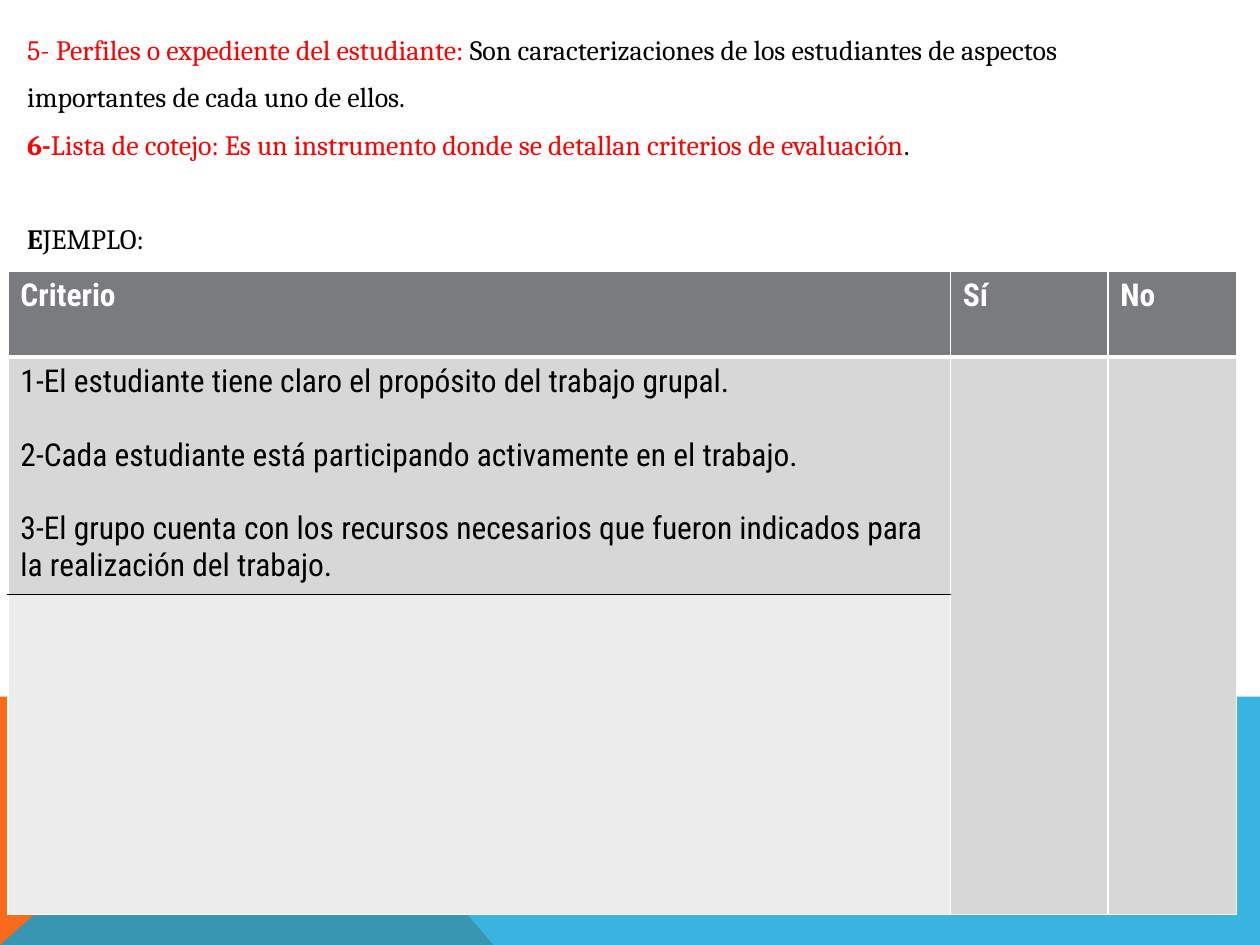
from typing import NamedTuple

from lxml.etree import SubElement
from pptx import Presentation
from pptx.dml.color import RGBColor
from pptx.oxml.ns import qn
from pptx.util import Pt

RED = RGBColor(0xFF, 0x00, 0x00)
BLACK = RGBColor(0x00, 0x00, 0x00)
WHITE = RGBColor(0xFF, 0xFF, 0xFF)
ORANGE = RGBColor(0xF9, 0x6A, 0x1B)
BLUE = RGBColor(0x08, 0xA1, 0xD9)
SLATE = RGBColor(0x79, 0x7B, 0x7E)
GREY = RGBColor(0xD7, 0xD7, 0xD8)
PALE = RGBColor(0xEC, 0xEC, 0xEC)


class Band(NamedTuple):
    points: list[tuple[float, float]]
    color: RGBColor
    alpha: int = 100


class Span(NamedTuple):
    text: str
    color: RGBColor = BLACK
    bold: bool = False


class Line(NamedTuple):
    spans: list[Span]
    before: float = 8


class Edge(NamedTuple):
    color: RGBColor = WHITE
    width: float = 1


class Row(NamedTuple):
    height: float
    fills: list[RGBColor]
    texts: list[list[str]]
    color: RGBColor = BLACK
    bold: bool = False


BANDS = [
    Band([(0, 540), (0, 397.5), (160.5, 397.5), (281.5, 540)], ORANGE),
    Band([(0, 540), (160.5, 397.5), (720, 398), (720, 540)], BLUE, 80),
]
LINES = [
    Line([
        Span("5- Perfiles o expediente del estudiante: ", RED),
        Span("Son caracterizaciones de los estudiantes de aspectos"),
    ]),
    Line([Span("importantes de cada uno de ellos.")]),
    Line([
        Span("6-", RED, True),
        Span("Lista de cotejo: Es un instrumento donde se detallan "
             "criterios de evaluación", RED),
        Span("."),
    ]),
    Line([Span("E", bold=True), Span("JEMPLO:")], 35),
]
COLS = [538.5, 90, 73.5]
ROWS = [
    Row(49, [SLATE] * 3, [["Criterio"], ["Sí"], ["No"]], WHITE, True),
    Row(134, [GREY] * 3, [[
        "1-El estudiante tiene claro el propósito del trabajo grupal.",
        "2-Cada estudiante está participando activamente en el trabajo.",
        "3-El grupo cuenta con los recursos necesarios que fueron indicados "
        "para la realización del trabajo.",
    ], [], []]),
    Row(183, [PALE, GREY, GREY], [[], [], []]),
]
THICK = Edge(width=3)
DARK = Edge(BLACK)
EDGES = {(0, col, "B"): THICK for col in range(3)}
EDGES |= {(1, col, "T"): THICK for col in range(3)}
EDGES |= {(1, 0, "B"): DARK, (2, 0, "T"): DARK}


def draw_band(slide, band: Band) -> None:
    start, *rest = band.points
    pen = slide.shapes.build_freeform(*start, scale=Pt(1))
    pen.add_line_segments(rest, close=True)
    shape = pen.convert_to_shape()
    shape.shadow.inherit = False
    shape.line.fill.background()
    shape.fill.solid()
    shape.fill.fore_color.rgb = band.color
    if band.alpha < 100:
        props = shape.element.spPr
        tint = props.find(qn("a:solidFill"))[0]
        SubElement(tint, qn("a:alpha"), val=str(band.alpha * 1000))


def draw_text(slide, lines: list[Line]) -> None:
    box = slide.shapes.add_textbox(Pt(8.5), Pt(15), Pt(703), Pt(136))
    frame = box.text_frame
    frame.word_wrap = True
    for i, line in enumerate(lines):
        para = frame.add_paragraph() if i else frame.paragraphs[0]
        para.space_before = Pt(line.before if i else 0)
        para.line_spacing = Pt(19.1)
        para.font.size = Pt(16)
        para.font.name = "Cambria"
        for span in line.spans:
            run = para.add_run()
            run.text = span.text
            run.font.color.rgb = span.color
            run.font.bold = span.bold


def draw_edge(cell, side: str, edge: Edge) -> None:
    props = cell._tc.get_or_add_tcPr()
    line = SubElement(props, qn(f"a:ln{side}"), w=str(Pt(edge.width)))
    fill = SubElement(line, qn("a:solidFill"))
    SubElement(fill, qn("a:srgbClr"), val=str(edge.color))


def fill_cell(cell, row: Row, col: int) -> None:
    cell.fill.solid()
    cell.fill.fore_color.rgb = row.fills[col]
    frame = cell.text_frame
    for i, text in enumerate(row.texts[col]):
        para = frame.add_paragraph() if i else frame.paragraphs[0]
        para.text = text
        para.space_before = Pt(21 if i else 0)
        para.font.size = Pt(18)
        para.font.name = "Roboto Condensed"
        para.font.bold = row.bold
        para.font.color.rgb = row.color


def draw_table(slide, rows: list[Row]) -> None:
    high = sum(row.height for row in rows)
    frame = slide.shapes.add_table(
        len(rows), len(COLS), Pt(4.5), Pt(155), Pt(sum(COLS)), Pt(high))
    table = frame.table
    for col, width in enumerate(COLS):
        table.columns[col].width = Pt(width)
    for i, row in enumerate(rows):
        table.rows[i].height = Pt(row.height)
        for col in range(len(COLS)):
            cell = table.cell(i, col)
            for side in "LRTB":
                draw_edge(cell, side, EDGES.get((i, col, side), Edge()))
            fill_cell(cell, row, col)
    for col in (1, 2):
        table.cell(1, col).merge(table.cell(2, col))


def main() -> None:
    deck = Presentation()
    deck.slide_width, deck.slide_height = Pt(720), Pt(540)
    slide = deck.slides.add_slide(deck.slide_layouts[6])
    for band in BANDS:
        draw_band(slide, band)
    draw_text(slide, LINES)
    draw_table(slide, ROWS)
    deck.save("out.pptx")


if __name__ == "__main__":
    main()
